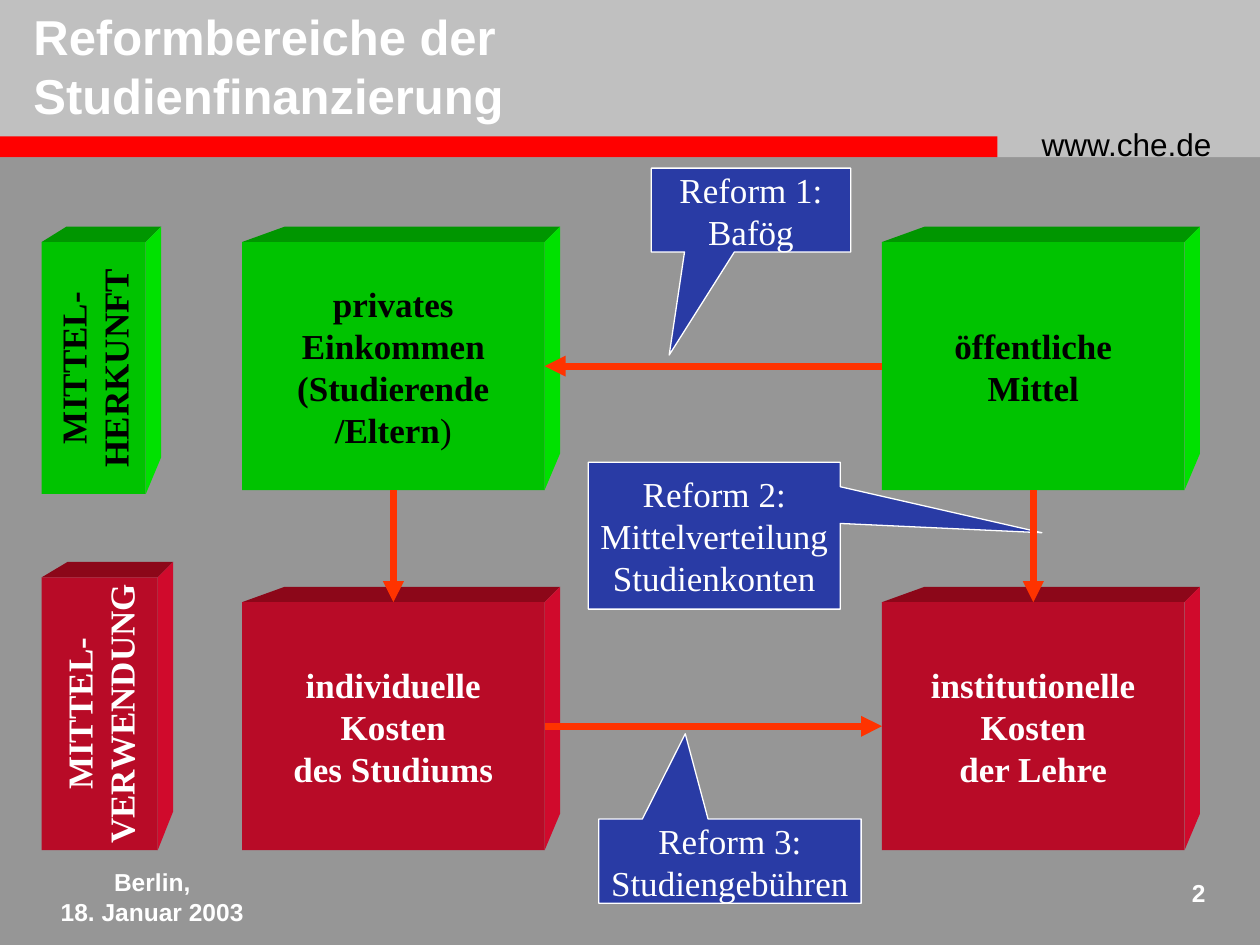
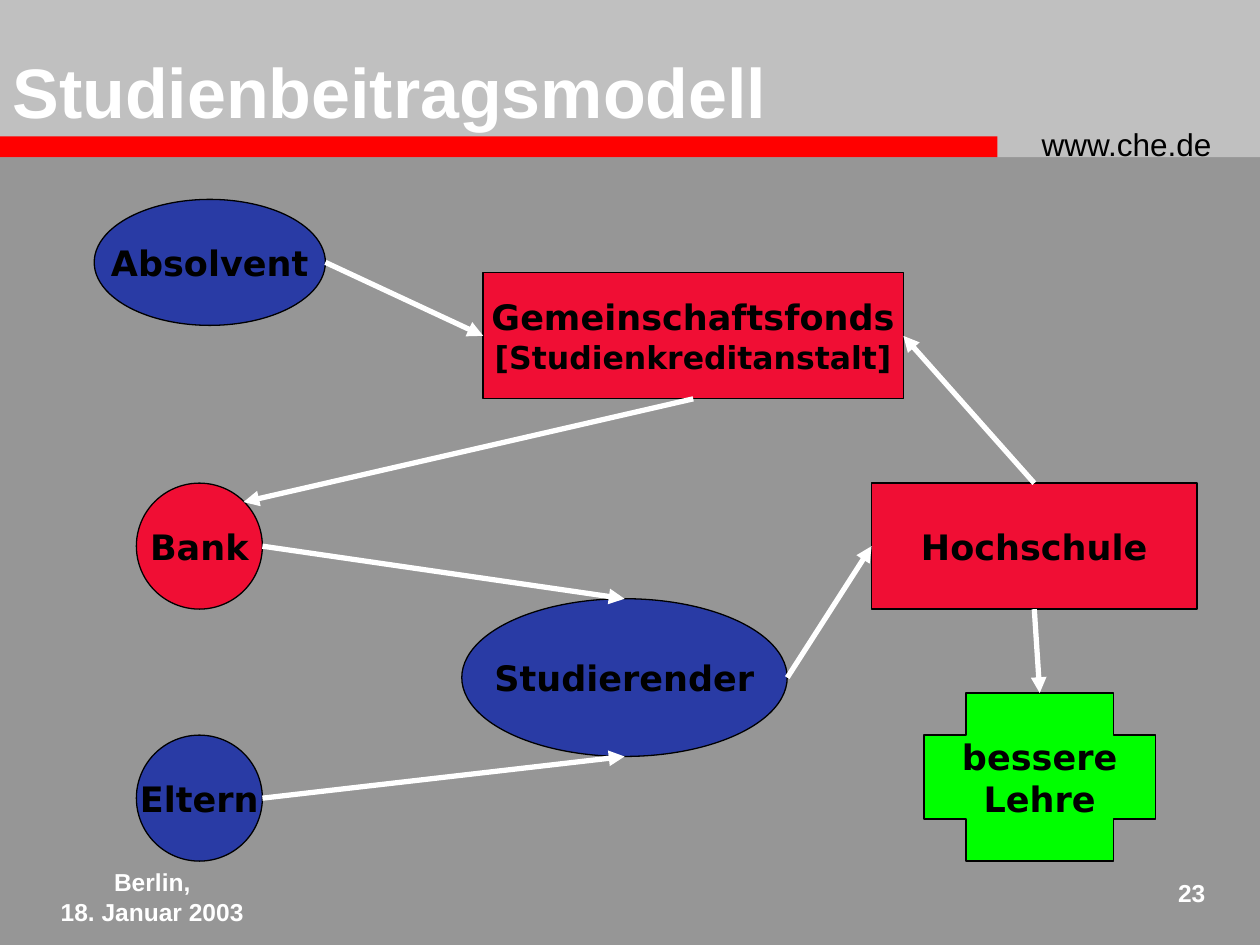
"""Build two slides on reforming student finance."""
from lxml import etree
from pptx import Presentation
from pptx.dml.color import RGBColor
from pptx.enum.shapes import MSO_CONNECTOR as Link, MSO_SHAPE as Form
from pptx.enum.text import MSO_ANCHOR as Anchor, MSO_AUTO_SIZE as Fit, PP_ALIGN as Align
from pptx.oxml.ns import qn
from pptx.util import Cm, Pt

COLORS = {
    "ground": "969696", "band": "C0C0C0", "rule": "FF0000",
    "white": "FFFFFF", "black": "000000", "blue": "293BA5",
    "crimson": "F00E34", "lime": "00FF00", "flow": "FF3300",
    "source": "00C300", "source_top": "009600", "source_side": "00E100",
    "use": "B80B27", "use_top": "8C0719", "use_side": "D00A2C",
}
SANS, SERIF, WIDE = "Arial", "Times New Roman", "DejaVu Sans"

WEBSITE = "www.che.de"
PLACE_AND_DATE = ["Berlin,", "18. Januar 2003"]

LEFT, RIGHT = 4.88, 17.78
UPPER, LOWER = 4.88, 12.14
BLOCK_SIZE = (6.1, 5)
DEPTH = 0.31

TEXT_ON = {"source": "black", "use": "white"}
FUNDING_BLOCKS = {
    "private": ("source", (LEFT, UPPER, *BLOCK_SIZE),
                ["privates", "Einkommen", "(Studierende", [("/Eltern", {}), (")", {"bold": False})]]),
    "public": ("source", (RIGHT, UPPER, *BLOCK_SIZE), ["öffentliche", "Mittel"]),
    "individual": ("use", (LEFT, LOWER, *BLOCK_SIZE), ["individuelle", "Kosten", "des Studiums"]),
    "institutional": ("use", (RIGHT, LOWER, *BLOCK_SIZE),
                      ["institutionelle", "Kosten", "der Lehre"]),
}
ROW_LABELS = [
    ("source", (0.84, 4.88, 2.1, 5.08), ["MITTEL-", "HERKUNFT"]),
    ("use", (0.84, 11.64, 2.34, 5.5), ["MITTEL-", "VERWENDUNG"]),
]
REFORMS = [
    ((13.13, 3.39, 4.02, 1.69), (-0.41, 1.73), ["Reform 1:", "Bafög"]),
    ((11.86, 9.32, 5.08, 2.96), (1.3, -0.02),
     ["Reform 2:", "Mittelverteilung", "Studienkonten"]),
    ((12.07, 16.51, 5.29, 1.7), (-0.17, -1.51), ["Reform 3:", "Studiengebühren"]),
]
FUNDING_FLOWS = [
    ("private", "bottom", "individual", "top"),
    ("individual", "right", "institutional", "left"),
    ("public", "left", "private", "right"),
    ("public", "bottom", "institutional", "top"),
]

ACTORS = {
    "student": (Form.OVAL, "blue", (9.31, 12.07, 6.56, 3.18), ["Studierender"]),
    "university": (Form.RECTANGLE, "crimson", (17.57, 9.74, 6.56, 2.54), ["Hochschule"]),
    "fund": (Form.RECTANGLE, "crimson", (9.74, 5.5, 8.47, 2.54),
             ["Gemeinschaftsfonds", [("[Studienkreditanstalt]", {"size": 18})]]),
    "parents": (Form.OVAL, "blue", (2.75, 14.82, 2.54, 2.54), ["Eltern"]),
    "bank": (Form.OVAL, "crimson", (2.75, 9.74, 2.54, 2.54), ["Bank"]),
    "graduate": (Form.OVAL, "blue", (1.9, 4.02, 4.66, 2.54), ["Absolvent"]),
    "teaching": (Form.CROSS, "lime", (18.63, 13.97, 4.66, 3.39), ["bessere", "Lehre"]),
}
MODEL_FLOWS = [
    ("student", "right", "university", "left"),
    ("university", "top", "fund", "right"),
    ("fund", "bottom", "bank", "upper right"),
    ("parents", "right", "student", "bottom"),
    ("bank", "right", "student", "top"),
    ("university", "bottom", "teaching", "top"),
    ("graduate", "right", "fund", "left"),
]
SIDES = {"top": (0.5, 0), "left": (0, 0.5), "bottom": (0.5, 1), "right": (1, 0.5),
         "upper right": (0.85, 0.15)}


def rgb(color):
    return RGBColor.from_string(COLORS[color])


def write(frame, lines, font, size, color, bold=False, align=Align.CENTER):
    for number, line in enumerate(lines):
        paragraph = frame.paragraphs[0] if number == 0 else frame.add_paragraph()
        paragraph.alignment = align
        for words, change in [(line, {})] if isinstance(line, str) else line:
            run = paragraph.add_run()
            run.text = words
            run.font.name = font
            run.font.size = Pt(change.get("size", size))
            run.font.bold = change.get("bold", bold)
            run.font.color.rgb = rgb(color)


def paint(shape, fill, outline=None):
    shape.shadow.inherit = False
    shape.fill.solid()
    shape.fill.fore_color.rgb = rgb(fill)
    if outline:
        shape.line.color.rgb = rgb(outline)
        shape.line.width = Pt(0.75)
    else:
        shape.line.fill.background()


def add_form(slide, form, box, fill, outline=None):
    shape = slide.shapes.add_shape(form, *map(Cm, box))
    paint(shape, fill, outline)
    shape.text_frame.word_wrap = False
    shape.text_frame.vertical_anchor = Anchor.MIDDLE
    return shape


def add_text(slide, box, lines, size, color, **style):
    label = slide.shapes.add_textbox(*map(Cm, box))
    label.text_frame.word_wrap = True
    write(label.text_frame, lines, SANS, size, color, **style)
    return label


def add_face(slide, corners, fill):
    points = [(Cm(x), Cm(y)) for x, y in corners]
    outline = slide.shapes.build_freeform(*points[0], scale=1.0)
    outline.add_line_segments(points[1:], close=True)
    paint(outline.convert_to_shape(), fill)


def add_block(slide, kind, box, lines):
    x, y, width, height = box
    right, bottom = x + width, y + height
    inset = DEPTH + 0.09 * width
    rise = DEPTH + 0.085 * height
    back = (right + DEPTH, y - DEPTH)
    add_face(slide, [(x, y), (x + inset, y - DEPTH), back, (right, y)], kind + "_top")
    add_face(slide, [(right, y), back, (right + DEPTH, bottom - rise), (right, bottom)],
             kind + "_side")
    front = add_form(slide, Form.RECTANGLE, box, kind)
    write(front.text_frame, lines, SERIF, 20, TEXT_ON[kind], bold=True)
    return front


def point_on(shape, side):
    across, down = SIDES[side]
    return int(shape.left + across * shape.width), int(shape.top + down * shape.height)


def add_flows(slide, flows, shapes, color, width):
    for start, start_side, end, end_side in flows:
        flow = slide.shapes.add_connector(
            Link.STRAIGHT, *point_on(shapes[start], start_side), *point_on(shapes[end], end_side))
        flow.line.color.rgb = rgb(color)
        flow.line.width = Pt(width)
        etree.SubElement(flow.line._get_or_add_ln(), qn("a:tailEnd"), type="triangle")
        etree.SubElement(flow.element.spPr, qn("a:effectLst"))


def add_shared_parts(slide, layout):
    shared = [
        add_form(slide, Form.RECTANGLE, (0, 0, 25.4, 3.17), "band"),
        add_form(slide, Form.RECTANGLE, (0, 2.75, 20.11, 0.42), "rule"),
        add_text(slide, (20.75, 2.39, 4.45, 1.02), [WEBSITE], 18, "black", align=Align.LEFT),
        add_text(slide, (0, 17.36, 6.14, 1.27), PLACE_AND_DATE, 14, "white", bold=True),
    ]
    for part in shared:
        layout.shapes.element.append(part.element)


def start_slide(slide, heading, box, size, number):
    title = slide.shapes.title
    title.left, title.top, title.width, title.height = map(Cm, box)
    title.text_frame.auto_size = Fit.NONE
    title.text_frame.vertical_anchor = Anchor.TOP
    write(title.text_frame, [heading], SANS, size, "white", bold=True, align=Align.LEFT)
    add_text(slide, (23.07, 17.57, 1.48, 1.06), [number], 14, "white",
             bold=True, align=Align.RIGHT)


def build_reforms(slide):
    start_slide(slide, "Reformbereiche der Studienfinanzierung", (0.42, 0, 19, 2.62), 28, "2")
    blocks = {name: add_block(slide, *block) for name, block in FUNDING_BLOCKS.items()}
    for row in ROW_LABELS:
        label = add_block(slide, *row)
        label.text_frame._txBody.bodyPr.set("vert", "vert270")
    for box, tip, lines in REFORMS:
        reform = add_form(slide, Form.RECTANGULAR_CALLOUT, box, "blue", "white")
        reform.adjustments[0], reform.adjustments[1] = tip
        write(reform.text_frame, lines, SERIF, 20, "white")
    add_flows(slide, FUNDING_FLOWS, blocks, "flow", 4)


def build_model(slide):
    start_slide(slide, "Studienbeitragsmodell", (0, 0.85, 20.11, 1.96), 40, "23")
    actors = {}
    for name, (form, fill, box, lines) in ACTORS.items():
        actors[name] = add_form(slide, form, box, fill, "black")
        write(actors[name].text_frame, lines, WIDE, 20, "black", bold=True)
    add_flows(slide, MODEL_FLOWS, actors, "white", 3)


def main():
    deck = Presentation()
    deck.slide_width, deck.slide_height = Cm(25.4), Cm(19.05)
    ground = deck.slide_master.background.fill
    ground.solid()
    ground.fore_color.rgb = rgb("ground")
    title_only = deck.slide_layouts[5]
    reforms, model = [deck.slides.add_slide(title_only) for _ in range(2)]
    add_shared_parts(reforms, title_only)
    build_reforms(reforms)
    build_model(model)
    deck.save("out.pptx")


if __name__ == "__main__":
    main()
